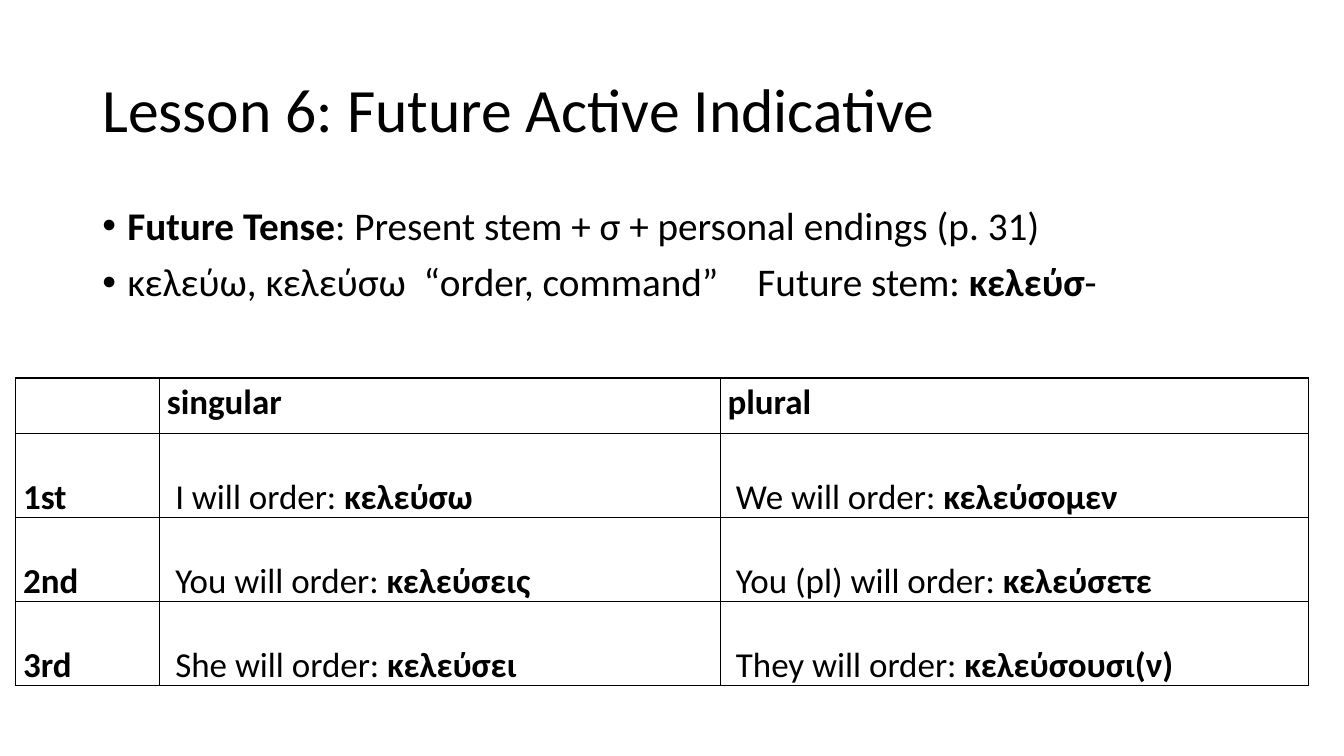
from dataclasses import dataclass

from lxml import etree
from pptx import Presentation
from pptx import util as u
from pptx.dml.color import RGBColor
from pptx.enum import text
from pptx.oxml import ns

PX = 9525
BLACK = "000000"
FONT = "Calibri"
INDENT = 24


@dataclass(frozen=True)
class Run:
    words: str
    bold: bool = False


@dataclass(frozen=True)
class Block:
    left: int
    top: int
    width: int
    height: int
    size: int
    anchor: text.MSO_ANCHOR
    paragraphs: tuple[tuple[Run, ...], ...]
    bulleted: bool = False


@dataclass(frozen=True)
class Person:
    label: str
    singular: tuple[str, str]
    plural: tuple[str, str]


LESSON = Block(88, 38, 1104, 139, 44, text.MSO_ANCHOR.MIDDLE,
               ((Run("Lesson 6: Future Active Indicative"),),))
RULES = Block(88, 192, 1104, 457, 28, text.MSO_ANCHOR.TOP, (
    (Run("Future Tense", True),
     Run(": Present stem + σ + personal endings (p. 31)")),
    (Run("κελεύω, κελεύσω  “order, command”\tFuture stem: "),
     Run("κελεύσ", True), Run("-")),
), bulleted=True)
PERSONS = (
    Person("1st", ("I will order: ", "κελεύσω"), ("We will order: ", "κελεύσομεν")),
    Person("2nd", ("You will order: ", "κελεύσεις"), ("You (pl) will order: ", "κελεύσετε")),
    Person("3rd", ("She will order: ", "κελεύσει"), ("They will order: ", "κελεύσουσι(ν)")),
)
COLUMNS = (137, 534, 560)
ROWS = (53, 74, 74, 74)


def px(length: int) -> u.Emu:
    """Turn whole px into EMU."""
    return u.Emu(length * PX)


def colour(value: str) -> RGBColor:
    """Turn a hex string into a colour."""
    return RGBColor.from_string(value)


def write(paragraph, runs: tuple[Run, ...], size: int, spacing: float) -> None:
    """Fill a paragraph with formatted runs."""
    paragraph.line_spacing = spacing
    for part in runs:
        run = paragraph.add_run()
        run.text = part.words
        style = {"name": FONT, "size": u.Pt(size), "bold": part.bold}
        for name, value in style.items():
            setattr(run.font, name, value)
        run.font.color.rgb = colour(BLACK)


def add_bullet(paragraph) -> None:
    """Give a paragraph a hanging bullet."""
    properties = paragraph._p.get_or_add_pPr()
    properties.set("marL", str(px(INDENT)))
    properties.set("indent", str(-px(INDENT)))
    for tag, key, value in (("a:buFont", "typeface", "Arial"), ("a:buChar", "char", "•")):
        etree.SubElement(properties, ns.qn(tag)).set(key, value)


def draw_block(slide, block: Block) -> None:
    """Draw a text block."""
    box = slide.shapes.add_textbox(*map(px, (block.left, block.top, block.width, block.height)))
    frame = box.text_frame
    frame.word_wrap = True
    frame.vertical_anchor = block.anchor
    for index, runs in enumerate(block.paragraphs):
        paragraph = frame.add_paragraph() if index else frame.paragraphs[0]
        write(paragraph, runs, block.size, 0.9)
        if block.bulleted:
            paragraph.space_before = u.Pt(10)
            add_bullet(paragraph)


def add_borders(cell) -> None:
    """Draw a thin line on every side of a cell."""
    properties = cell._tc.get_or_add_tcPr()
    for index, side in enumerate(("a:lnL", "a:lnR", "a:lnT", "a:lnB")):
        line = etree.Element(ns.qn(side), w=str(u.Pt(1)))
        fill = etree.SubElement(line, ns.qn("a:solidFill"))
        etree.SubElement(fill, ns.qn("a:srgbClr")).set("val", BLACK)
        properties.insert(index, line)


def draw_paradigm(slide) -> None:
    """Draw the table of persons and numbers."""
    area = map(px, (15, 360, sum(COLUMNS), sum(ROWS)))
    paradigm = slide.shapes.add_table(len(ROWS), len(COLUMNS), *area).table
    paradigm.first_row = paradigm.horz_banding = False
    for column, width in zip(paradigm.columns, COLUMNS):
        column.width = px(width)
    for row, height in zip(paradigm.rows, ROWS):
        row.height = px(height)
    heading = ((), (Run("singular", True),), (Run("plural", True),))
    body = [((Run(person.label, True),),
             *((Run(english), Run(greek, True))
               for english, greek in (person.singular, person.plural)))
            for person in PERSONS]
    for r, entries in enumerate((heading, *body)):
        for c, runs in enumerate(entries):
            cell = paradigm.cell(r, c)
            margins = {"margin_left": 15 if r and c else 7, "margin_right": 7,
                       "margin_top": 0, "margin_bottom": 0}
            for name, value in margins.items():
                setattr(cell, name, px(value))
            cell.fill.background()
            add_borders(cell)
            write(cell.text_frame.paragraphs[0], runs, 25, 2.0 if r else 1.07)


def main() -> None:
    """Build the lesson slide."""
    deck = Presentation()
    deck.slide_width, deck.slide_height = px(1280), px(720)
    slide = deck.slides.add_slide(deck.slide_layouts[6])
    for block in (LESSON, RULES):
        draw_block(slide, block)
    draw_paradigm(slide)
    deck.save("out.pptx")


if __name__ == "__main__":
    main()
